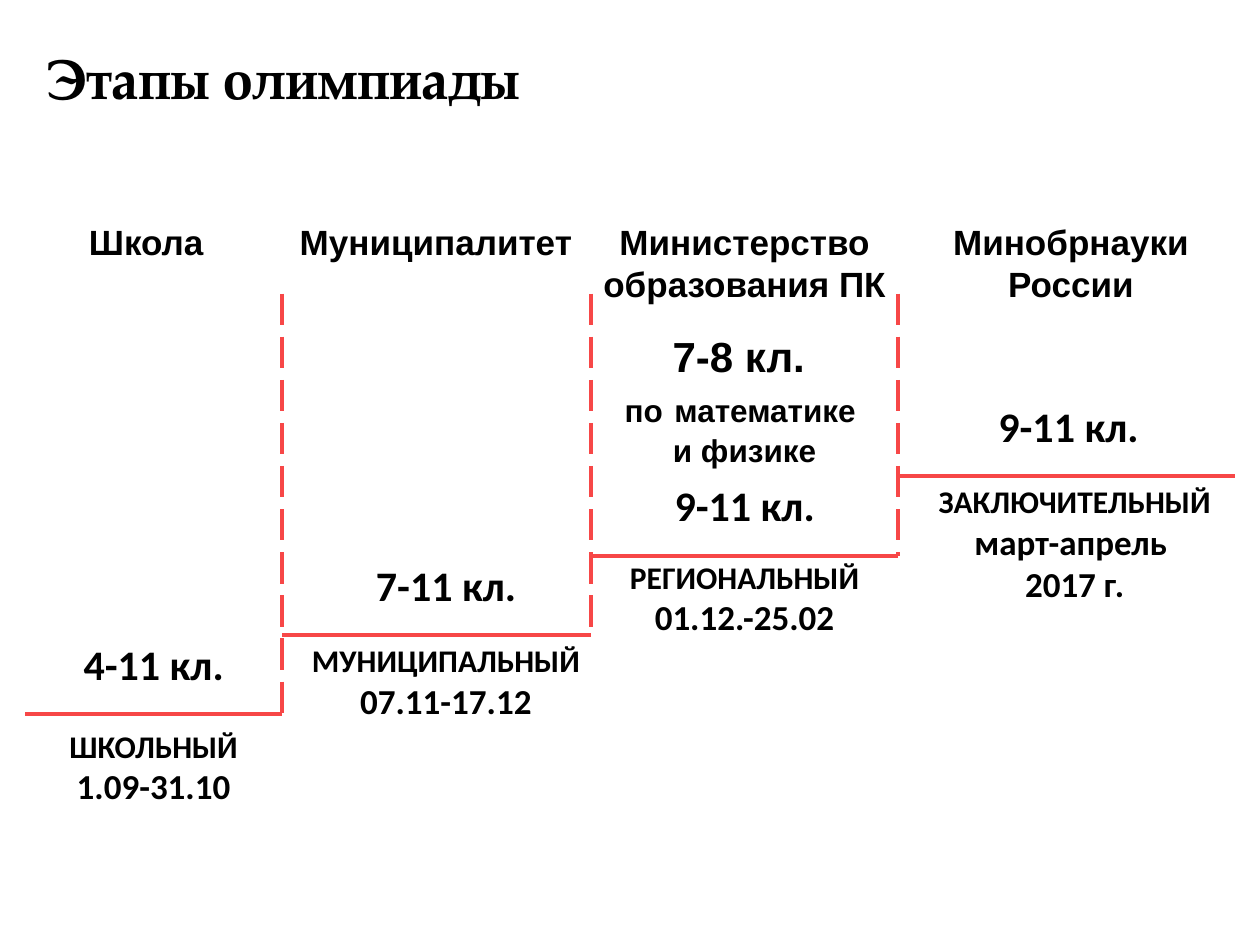
from dataclasses import dataclass

from lxml.etree import SubElement
from pptx import Presentation
from pptx.dml.color import RGBColor
from pptx.enum.dml import MSO_LINE_DASH_STYLE as Dash
from pptx.enum.shapes import MSO_CONNECTOR as Connector
from pptx.enum.text import MSO_ANCHOR as Anchor, PP_ALIGN as Align
from pptx.oxml.ns import qn
from pptx.util import Inches, Pt


@dataclass(frozen=True)
class Theme:
    ink: RGBColor = RGBColor(0, 0, 0)
    step: RGBColor = RGBColor(0xF7, 0x47, 0x47)
    step_width: float = 2.25
    title_font: str = "TeX Gyre Pagella"
    owner_font: str = "Arial"
    stage_font: str = "Calibri"
    title_size: int = 32
    grade_size: int = 24
    body_size: int = 20
    small_size: int = 18


@dataclass(frozen=True)
class Stage:
    owner: str
    owner_center: float
    grades: str
    grades_center: float
    name: str
    dates: tuple
    name_center: float
    name_gap: float = 0


THEME = Theme()
EDGES = (0.2, 2.24, 4.69, 7.13, 9.8)
GROUND, RISE, WALL_TOP = 5.67, 0.63, 2.33
OWNER_TOP, GRADES_LIFT = 1.7, 0.65
STAGES = (
    Stage("Школа", 1.16, "4-11 кл.", 1.22,
          "ШКОЛЬНЫЙ", ("1.09-31.10",), 1.22, 0.05),
    Stage("Муниципалитет", 3.46, "7-11 кл.", 3.54,
          "МУНИЦИПАЛЬНЫЙ", ("07.11-17.12",), 3.54),
    Stage("Министерство образования ПК", 5.91, "9-11 кл.", 5.91,
          "РЕГИОНАЛЬНЫЙ", ("01.12.-25.02",), 5.91, -0.03),
    Stage("Минобрнауки России", 8.5, "9-11 кл.", 8.48,
          "ЗАКЛЮЧИТЕЛЬНЫЙ", ("март-апрель ", "2017 г."), 8.53),
)


def style_span(span, font, size):
    span.font.name = font
    span.font.size = Pt(size)
    span.font.bold = True
    span.font.color.rgb = THEME.ink


def add_title(page, text):
    title = page.shapes.title
    title.left, title.top = Inches(0.27), Inches(0.13)
    title.width, title.height = Inches(6.54), Inches(0.97)
    frame = title.text_frame
    frame.text = text
    frame.vertical_anchor = Anchor.MIDDLE
    para = frame.paragraphs[0]
    para.alignment = Align.LEFT
    style_span(para.runs[0], THEME.title_font, THEME.title_size)


def add_label(page, center, top, width, height, font, lines, wrap=True):
    box = page.shapes.add_textbox(
        Inches(center - width / 2), Inches(top), Inches(width), Inches(height))
    frame = box.text_frame
    frame.word_wrap = wrap
    for index, spans in enumerate(lines):
        para = frame.add_paragraph() if index else frame.paragraphs[0]
        para.alignment = Align.CENTER
        for text, size in spans:
            span = para.add_run()
            span.text = text
            style_span(span, font, size)


def add_line(page, start, end, dashed=False):
    line = page.shapes.add_connector(
        Connector.STRAIGHT, *(Inches(value) for value in (*start, *end)))
    line.line.color.rgb = THEME.step
    line.line.width = Pt(THEME.step_width)
    if dashed:
        line.line.dash_style = Dash.LONG_DASH
    SubElement(line._element.spPr, qn("a:effectLst"))


def add_stage(page, index, stage):
    floor = GROUND - RISE * index
    left, right = EDGES[index:index + 2]
    add_line(page, (left, floor), (right, floor))
    if index < len(STAGES) - 1:
        add_line(page, (right, WALL_TOP), (right, floor), dashed=True)
    add_label(page, stage.owner_center, OWNER_TOP, 2.44, 0.77,
              THEME.owner_font, [[(stage.owner, THEME.body_size)]])
    add_label(page, stage.grades_center, floor - GRADES_LIFT, 2.05, 0.5,
              THEME.stage_font, [[(stage.grades, THEME.grade_size)]])
    dates = [[(date, THEME.body_size)] for date in stage.dates]
    add_label(page, stage.name_center, floor + stage.name_gap,
              2.8, 0.4 + 0.34 * len(dates), THEME.stage_font,
              [[(stage.name, THEME.small_size)], *dates])


def add_subject_note(page):
    big, small = THEME.grade_size, THEME.small_size
    add_label(page, 5.91, 2.57, 2.13, 1.21, THEME.owner_font,
              [[("7-8 кл. ", big)],
               [("по", small), (" ", big), ("математике ", small)],
               [("и физике", small)]], wrap=False)


def main():
    deck = Presentation()
    deck.slide_width, deck.slide_height = Inches(10), Inches(7.5)
    page = deck.slides.add_slide(deck.slide_layouts[5])
    add_title(page, "Этапы олимпиады")
    for index, stage in enumerate(STAGES):
        add_stage(page, index, stage)
    add_subject_note(page)
    deck.save("out.pptx")


if __name__ == "__main__":
    main()
